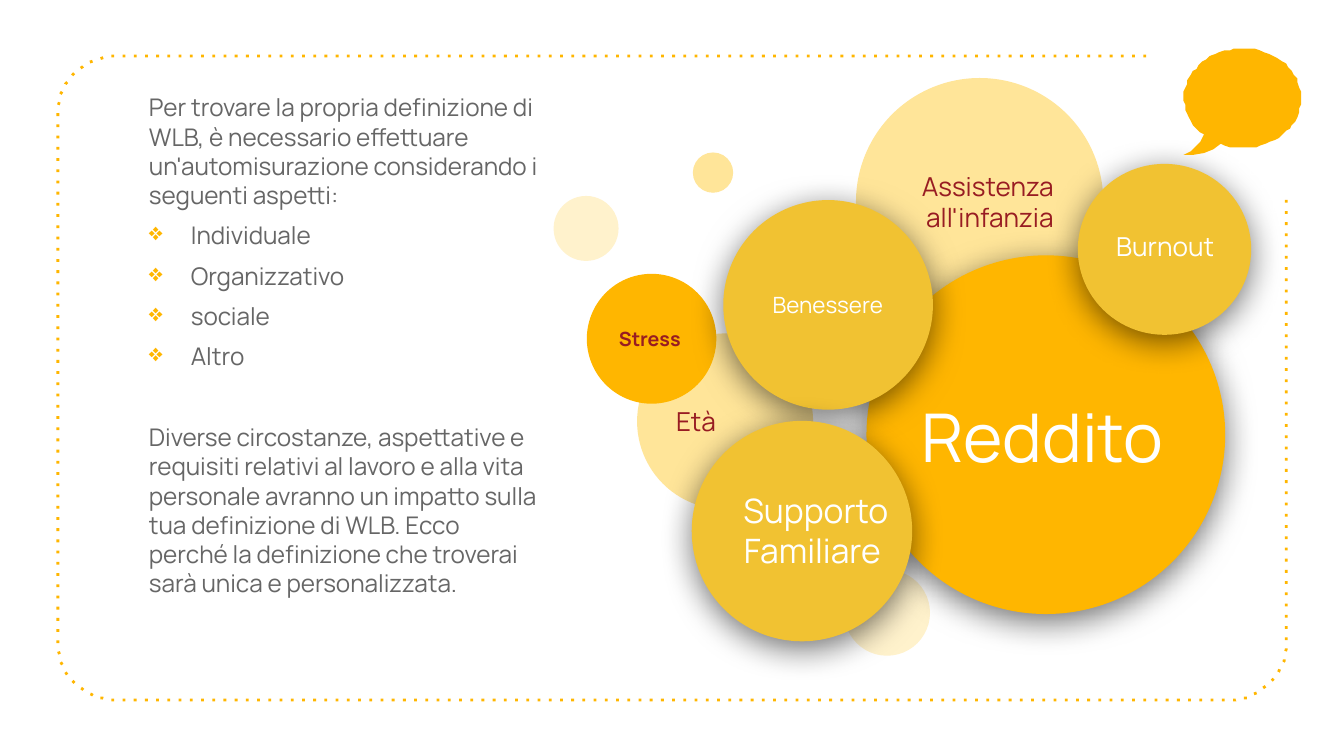
from dataclasses import dataclass
from math import cos, radians, sin
from typing import Optional

from lxml.etree import SubElement
from pptx import Presentation
from pptx.dml.color import RGBColor
from pptx.enum.dml import MSO_LINE
from pptx.enum.shapes import MSO_SHAPE
from pptx.enum.text import MSO_ANCHOR, PP_ALIGN
from pptx.oxml.ns import qn
from pptx.util import Pt


@dataclass(frozen=True)
class Theme:
    font: str = "Manrope"
    amber: str = "FFB600"
    gold: str = "F1C232"
    sand: str = "FFE599"
    cream: str = "FFF2CC"
    red: str = "981C22"
    white: str = "FFFFFF"
    grey: str = "666666"
    body: float = 13
    tiny: float = 10.5
    small: float = 12
    medium: float = 14
    large: float = 18
    huge: float = 36


T = Theme()


@dataclass(frozen=True)
class Label:
    text: str
    size: float
    color: str
    align: PP_ALIGN = PP_ALIGN.CENTER
    bold: bool = False


@dataclass(frozen=True)
class Item:
    x: float
    y: float
    w: float
    h: float
    fill: Optional[str] = None
    label: Optional[Label] = None
    shadow: bool = False
    kind: MSO_SHAPE = MSO_SHAPE.OVAL


@dataclass(frozen=True)
class Para:
    text: str
    bullet: bool = False
    before: float = 6


ITEMS = [
    Item(452.2, 305.3, 46, 46, T.cream),
    Item(296.6, 105, 34.8, 34.8, T.cream),
    Item(341.3, 178.6, 94.3, 94.3, T.sand, Label("Età", T.medium, T.red, PP_ALIGN.LEFT)),
    Item(458.6, 41.8, 132.5, 132.5, T.sand,
         Label("Assistenza all'infanzia", T.medium, T.red, PP_ALIGN.RIGHT)),
    Item(314.4, 146.7, 69.4, 69.6, T.amber,
         Label("Stress", T.tiny, T.red, PP_ALIGN.LEFT, True)),
    Item(371.2, 81.7, 21.6, 21.6, T.sand),
    Item(464.2, 136.8, 192.2, 192.2, T.amber, shadow=True),
    Item(478.1, 187.9, 160.6, 91.4, T.amber, Label("Reddito", T.huge, T.white),
         kind=MSO_SHAPE.RECTANGLE),
    Item(387.5, 107.2, 112.3, 112.3, T.gold, shadow=True),
    Item(405.4, 126, 76.3, 74.2, label=Label("Benessere", T.small, T.white)),
    Item(370.6, 225.5, 118.1, 118.1, T.gold, shadow=True),
    Item(384.5, 247, 101.5, 74.2, label=Label(" Supporto Familiare", T.large, T.white)),
    Item(577.4, 87.8, 92.9, 91.6, T.gold, shadow=True),
    Item(586.1, 98.6, 76.3, 67, label=Label("Burnout", T.medium, T.white)),
]

PARAS = [
    Para("Per trovare la propria definizione di WLB, è necessario effettuare "
         "un'automisurazione considerando i seguenti aspetti:"),
    *(Para(t, True) for t in ("Individuale", "Organizzativo", "sociale", "Altro")),
    Para("Diverse circostanze, aspettative e requisiti relativi al lavoro e alla vita "
         "personale avranno un impatto sulla tua definizione di WLB. Ecco perché la "
         "definizione che troverai sarà unica e personalizzata.", before=27.7),
]


def rgb(color: str) -> RGBColor:
    return RGBColor.from_string(color)


def arc(cx: float, cy: float, rx: float, ry: float, start: int, end: int, step: int) -> list:
    angles = range(start, end + step, step)
    return [(cx + rx * cos(radians(a)), cy + ry * sin(radians(a))) for a in angles]


def add_run(p, text: str, size: float, color: str, bold: bool = False) -> None:
    r = p.add_run()
    r.text = text
    r.font.name = T.font
    r.font.size = Pt(size)
    r.font.bold = bold
    r.font.color.rgb = rgb(color)


def setup_frame(sp, anchor: MSO_ANCHOR):
    tf = sp.text_frame
    tf.word_wrap = True
    tf.vertical_anchor = anchor
    tf.margin_left = tf.margin_right = tf.margin_top = tf.margin_bottom = Pt(7.2)
    return tf


def add_shadow(sp) -> None:
    effects = sp._element.spPr.find(qn("a:effectLst"))
    shadow = SubElement(effects, qn("a:outerShdw"), blurRad=str(Pt(18)), dist=str(Pt(4)),
                        dir="5400000", algn="ctr", rotWithShape="0")
    color = SubElement(shadow, qn("a:srgbClr"), val="000000")
    SubElement(color, qn("a:alpha"), val="55000")


def add_item(s, item: Item) -> None:
    box = [Pt(v) for v in (item.x, item.y, item.w, item.h)]
    if item.fill:
        sp = s.shapes.add_shape(item.kind, *box)
        sp.shadow.inherit = False
        sp.fill.solid()
        sp.fill.fore_color.rgb = rgb(item.fill)
        sp.line.fill.background()
    else:
        sp = s.shapes.add_textbox(*box)
    if item.shadow:
        add_shadow(sp)
    if item.label:
        p = setup_frame(sp, MSO_ANCHOR.MIDDLE).paragraphs[0]
        p.alignment = item.label.align
        add_run(p, item.label.text, item.label.size, item.label.color, item.label.bold)


def add_outline(s, points: list, close: bool):
    builder = s.shapes.build_freeform(*points[0], scale=Pt(1))
    builder.add_line_segments(points[1:], close=close)
    sp = builder.convert_to_shape()
    sp.shadow.inherit = False
    return sp


def add_border(s) -> None:
    left, top, right, bottom, rad = 31, 30.2, 689, 375.1, 30.4
    points = [(614.2, top)]
    points += arc(left + rad, top + rad, rad, rad, 180, 270, 6)[::-1]
    points += arc(left + rad, bottom - rad, rad, rad, 90, 180, 6)[::-1]
    points += arc(right - rad, bottom - rad, rad, rad, 0, 90, 6)[::-1]
    points.append((right, 105.1))
    sp = add_outline(s, points, False)
    sp.fill.background()
    sp.line.color.rgb = rgb(T.amber)
    sp.line.width = Pt(1.5)
    sp.line.dash_style = MSO_LINE.ROUND_DOT
    sp._element.spPr.find(".//" + qn("a:prstDash")).set("val", "dot")


def add_speech_bubble(s) -> None:
    tail = [(650.2, 79.5), (645, 82), (639.4, 82.9), (634.3, 82.9),
            (637.5, 81), (640.8, 78.5), (643, 76.3)]
    points = arc(665.6, 52.6, 31.4, 26.7, 132, 472, 5) + tail
    sp = add_outline(s, points, True)
    sp.fill.solid()
    sp.fill.fore_color.rgb = rgb(T.amber)
    sp.line.fill.background()


def add_body(s) -> None:
    sp = s.shapes.add_textbox(Pt(72.7), Pt(42.5), Pt(223.2), Pt(326.2))
    tf = setup_frame(sp, MSO_ANCHOR.TOP)
    for i, para in enumerate(PARAS):
        p = tf.add_paragraph() if i else tf.paragraphs[0]
        p.space_before = Pt(para.before)
        if para.bullet:
            pPr = p._p.get_or_add_pPr()
            pPr.set("marL", str(Pt(22.5)))
            pPr.set("indent", str(-Pt(22.5)))
            SubElement(SubElement(pPr, qn("a:buClr")), qn("a:srgbClr"), val=T.amber)
            SubElement(pPr, qn("a:buChar"), char="❖")
        add_run(p, para.text, T.body, T.grey)


def main() -> None:
    prs = Presentation()
    prs.slide_width, prs.slide_height = Pt(720), Pt(405)
    s = prs.slides.add_slide(prs.slide_layouts[6])
    add_border(s)
    for item in ITEMS:
        add_item(s, item)
    add_body(s)
    add_speech_bubble(s)
    prs.save("out.pptx")


if __name__ == "__main__":
    main()
